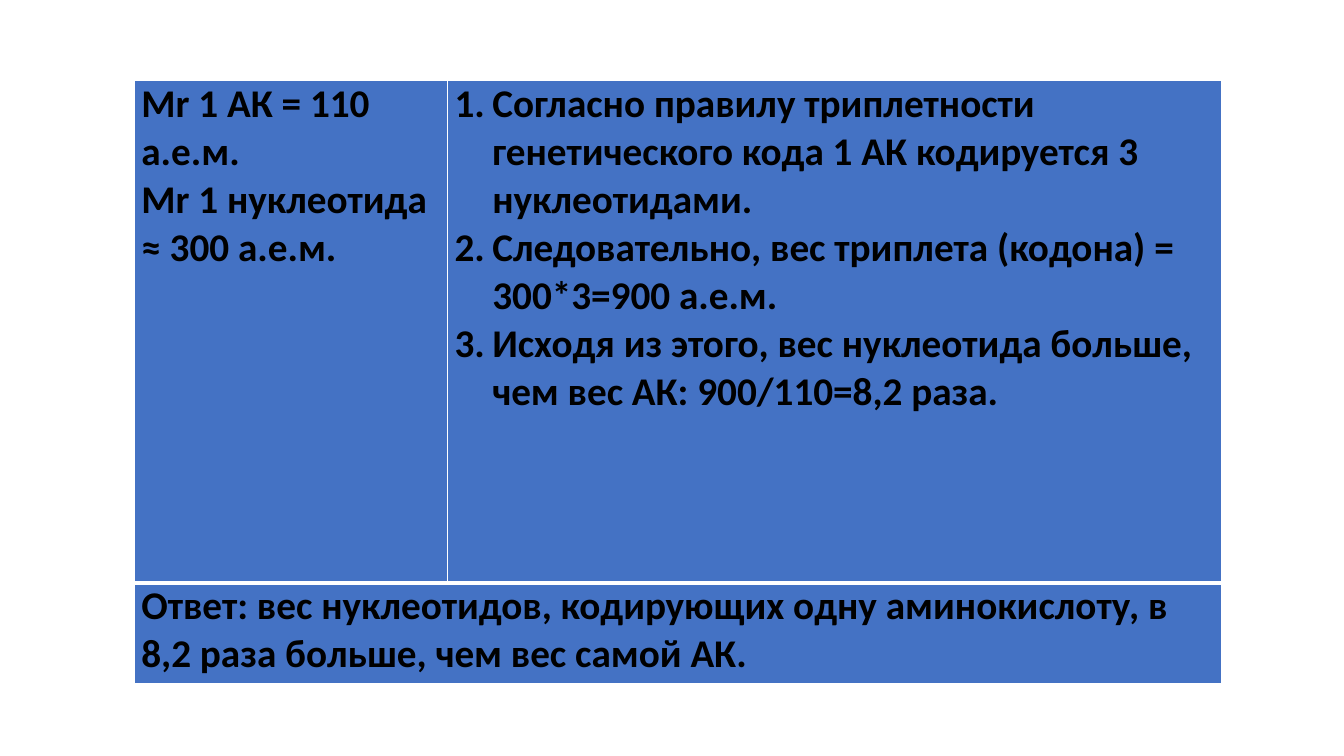
import pptx
import pptx.util
import pptx.dml.color
import pptx.oxml.ns
import lxml.etree

Pt = pptx.util.Pt

GIVEN = ["Mr 1 АК = 110 а.е.м.", "Mr 1 нуклеотида ≈ 300 а.е.м."]
SOLUTION = [
    "Согласно правилу триплетности генетического кода 1 АК кодируется 3 нуклеотидами.",
    "Следовательно, вес триплета (кодона) = 300*3=900 а.е.м.",
    "Исходя из этого, вес нуклеотида больше, чем вес АК: 900/110=8,2 раза.",
]
ANSWER = ["Ответ: вес нуклеотидов, кодирующих одну аминокислоту, в 8,2 раза больше, чем вес самой АК."]

COLORS = {"fill": "4472C4", "text": "000000", "border": "FFFFFF"}
LEFT, TOP = 96, 57.6
COLUMN_WIDTHS = [223.7, 553.2]
ROW_HEIGHTS = [358.6, 72]
NUMBER_INDENT = 27
THIN, THICK = 1, 3


def rgb(name):
    return pptx.dml.color.RGBColor.from_string(COLORS[name])


def add_element(parent, tag, **attributes):
    return lxml.etree.SubElement(parent, pptx.oxml.ns.qn(tag), attributes)


def set_borders(cell, top, bottom):
    """Draw all four cell borders; must run before the fill is set."""
    properties = cell._tc.get_or_add_tcPr()
    for side, width in (("L", THIN), ("R", THIN), ("T", top), ("B", bottom)):
        line = add_element(properties, f"a:ln{side}", w=str(Pt(width)))
        add_element(add_element(line, "a:solidFill"), "a:srgbClr", val=COLORS["border"])


def number_paragraph(paragraph):
    properties = paragraph._p.get_or_add_pPr()
    properties.set("marL", str(Pt(NUMBER_INDENT)))
    properties.set("indent", str(-Pt(NUMBER_INDENT)))
    add_element(properties, "a:buFont", typeface="+mj-lt")
    add_element(properties, "a:buAutoNum", type="arabicPeriod")


def write_cell(cell, lines, numbered=False):
    cell.margin_left = cell.margin_right = Pt(5)
    cell.margin_top = cell.margin_bottom = 0
    cell.text = "\n".join(lines)
    for paragraph in cell.text_frame.paragraphs:
        if numbered:
            number_paragraph(paragraph)
        font = paragraph.font
        font.name, font.size, font.bold = "Calibri", Pt(28), True
        font.color.rgb = rgb("text")


def main():
    deck = pptx.Presentation()
    deck.slide_width, deck.slide_height = Pt(960), Pt(540)
    slide = deck.slides.add_slide(deck.slide_layouts[6])

    solution_table = slide.shapes.add_table(
        len(ROW_HEIGHTS), len(COLUMN_WIDTHS), Pt(LEFT), Pt(TOP),
        Pt(sum(COLUMN_WIDTHS)), Pt(sum(ROW_HEIGHTS))).table
    for column, width in zip(solution_table.columns, COLUMN_WIDTHS):
        column.width = Pt(width)
    for row, height in zip(solution_table.rows, ROW_HEIGHTS):
        row.height = Pt(height)

    solution_table.cell(1, 0).merge(solution_table.cell(1, 1))
    for row, (top, bottom) in zip(solution_table.rows, [(THIN, THICK), (THICK, THIN)]):
        for cell in row.cells:
            set_borders(cell, top, bottom)
            cell.fill.solid()
            cell.fill.fore_color.rgb = rgb("fill")

    write_cell(solution_table.cell(0, 0), GIVEN)
    write_cell(solution_table.cell(0, 1), SOLUTION, numbered=True)
    write_cell(solution_table.cell(1, 0), ANSWER)
    deck.save("out.pptx")


if __name__ == "__main__":
    main()
